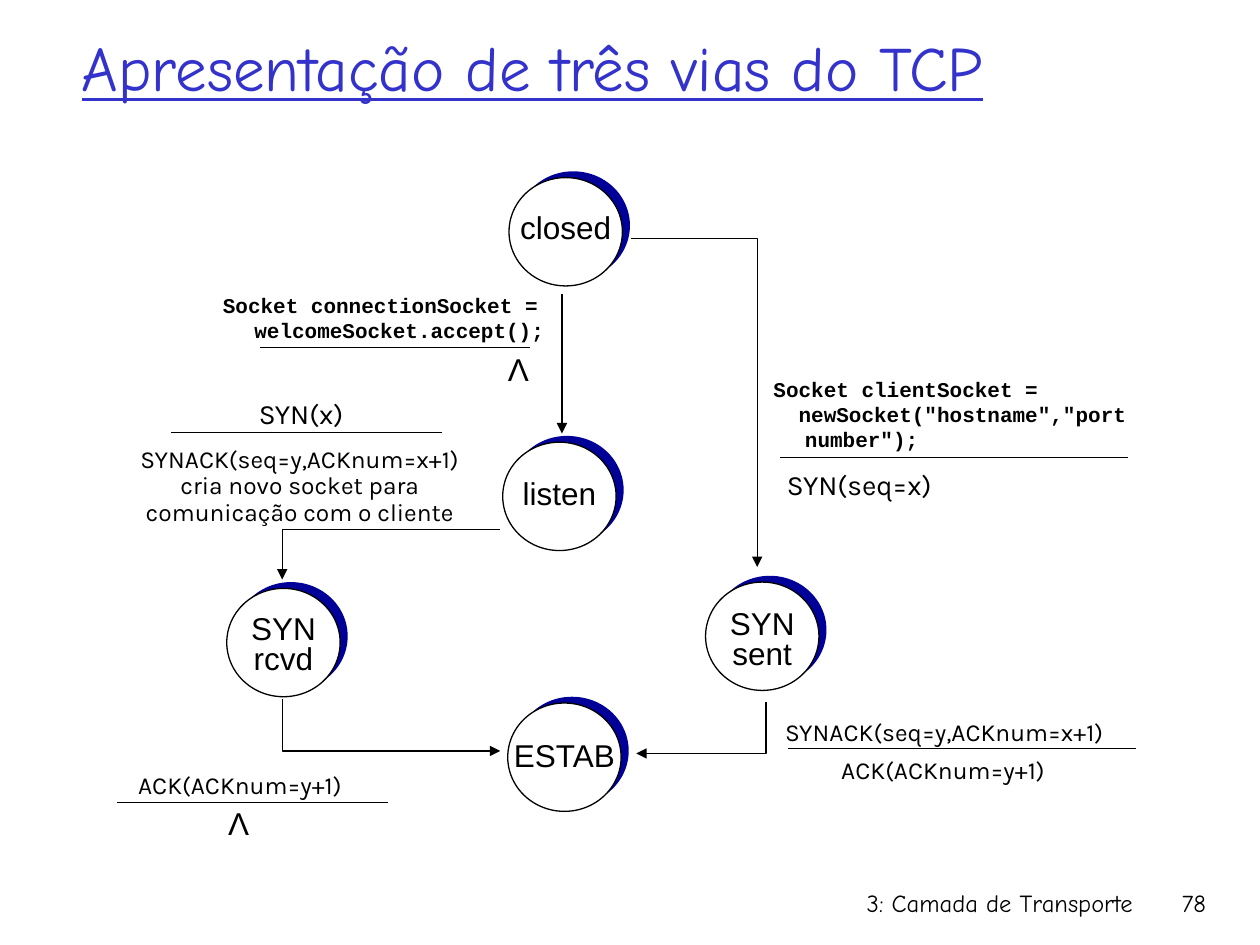
from dataclasses import dataclass

import pptx
import pptx.dml.color
import pptx.enum.shapes
import pptx.enum.text
import pptx.oxml
import pptx.oxml.ns
import pptx.util
from pptx.util import Inches

COLORS = {"black": "000000", "white": "FFFFFF", "navy": "000099", "title": "3333CC"}
ALIGN = pptx.enum.text.PP_ALIGN
ANCHOR = pptx.enum.text.MSO_ANCHOR
LABEL_FONT, CODE_FONT, EVENT_FONT, TITLE_FONT = "Arial", "Courier New", "Karla", "Comic Neue"
CIRCLE_WIDTH, CIRCLE_HEIGHT = 0.9, 0.86
BACK_SHIFT_X, BACK_SHIFT_Y = 0.06, -0.05
STATE_LABEL_WIDTH = 1.1


@dataclass
class State:
    """A connection state: circle corner, label lines and the label's top."""
    left: float
    top: float
    lines: list[str]
    label_top: float
    line_spacing: float = 0.8


@dataclass
class Label:
    lines: list[str]
    left: float
    top: float
    width: float
    height: float
    font: str = EVENT_FONT
    size: float = 14
    line_spacing: float | None = None
    bold: bool = False
    align: ALIGN = ALIGN.CENTER
    hanging: float = 0
    wrap: bool = False


@dataclass
class Bar:
    """The rule between an event and its action."""
    left: float
    y: float
    right: float


STATES = [
    State(4.04, 1.41, ["closed"], 1.6, 1),
    State(3.99, 3.51, ["listen"], 3.71, 1),
    State(1.8, 4.67, ["SYN", "rcvd"], 4.84),
    State(5.6, 4.62, ["SYN", "sent"], 4.8),
    State(4.03, 5.58, ["ESTAB"], 5.85),
]

CODE = dict(font=CODE_FONT, size=12, bold=True, align=ALIGN.LEFT, hanging=0.25, wrap=True)
LABELS = [
    Label(["Socket connectionSocket = welcomeSocket.accept();"], 1.67, 2.27, 2.82, 0.5, **CODE),
    Label(["Λ"], 3.93, 2.73, 0.37, 0.4, LABEL_FONT, 18),
    Label(["Socket clientSocket =", '  newSocket("hostname","port number");'],
          6.04, 2.94, 3.16, 0.7, **CODE),
    Label(["SYN(seq=x)"], 6.13, 3.66, 1.38, 0.37, size=16),
    Label(["SYN(x)"], 1.95, 3.1, 0.88, 0.37, size=16),
    Label(["SYNACK(seq=y,ACKnum=x+1)", "cria novo socket para", "comunicação com o cliente"],
          0.95, 3.5, 2.86, 0.72, line_spacing=0.9),
    Label(["SYNACK(seq=y,ACKnum=x+1)"], 6.07, 5.67, 2.85, 0.31, line_spacing=0.9),
    Label(["ACK(ACKnum=y+1)"], 6.53, 5.97, 1.91, 0.31, line_spacing=0.9),
    Label(["ACK(ACKnum=y+1)"], 0.95, 6.09, 1.91, 0.31, line_spacing=0.9),
    Label(["Λ"], 1.71, 6.33, 0.37, 0.4, LABEL_FONT, 18),
    Label(["3: Camada de Transporte"], 5.92, 7, 3.17, 0.5, TITLE_FONT, align=ALIGN.RIGHT, wrap=True),
    Label(["78"], 8.93, 7, 0.74, 0.5, TITLE_FONT, align=ALIGN.RIGHT, wrap=True),
]

BARS = [
    Bar(2.06, 2.76, 4.21),
    Bar(1.36, 3.43, 3.51),
    Bar(6.19, 3.63, 8.95),
    Bar(6.25, 5.94, 9.02),
    Bar(0.93, 6.37, 3.08),
]

# Each bent transition runs from its source state to its target state.
BENT_TRANSITIONS = [
    [(5.01, 1.89), (6.01, 1.89), (6.01, 4.5)],
    [(3.97, 4.2), (2.24, 4.2), (2.24, 4.6)],
    [(2.24, 5.55), (2.24, 5.96), (3.97, 5.96)],
    [(6.08, 5.57), (6.08, 5.98), (5.05, 5.98)],
]


def color(name: str) -> pptx.dml.color.RGBColor:
    return pptx.dml.color.RGBColor.from_string(COLORS[name])


def write_text(frame, lines: list[str], *, font: str, size: float, fill: str = "black",
               bold: bool = False, underline: bool = False, align: ALIGN = ALIGN.CENTER,
               line_spacing: float | None = None, hanging: float = 0,
               wrap: bool = False) -> None:
    frame.word_wrap = wrap
    frame.vertical_anchor = ANCHOR.TOP
    for index, line in enumerate(lines):
        paragraph = frame.add_paragraph() if index else frame.paragraphs[0]
        paragraph.alignment = align
        if line_spacing:
            paragraph.line_spacing = line_spacing
        if hanging:
            properties = paragraph._p.get_or_add_pPr()
            properties.set("marL", str(Inches(hanging)))
            properties.set("indent", str(-Inches(hanging)))
        run = paragraph.add_run()
        run.text = line
        run.font.name = font
        run.font.size = pptx.util.Pt(size)
        run.font.bold = bold
        run.font.underline = underline
        run.font.color.rgb = color(fill)


def add_label(slide, label: Label) -> None:
    box = slide.shapes.add_textbox(Inches(label.left), Inches(label.top),
                                   Inches(label.width), Inches(label.height))
    write_text(box.text_frame, label.lines, font=label.font, size=label.size, bold=label.bold,
               align=label.align, line_spacing=label.line_spacing,
               hanging=label.hanging, wrap=label.wrap)


def add_circle(group, left: float, top: float, fill: str, outlined: bool) -> None:
    circle = group.shapes.add_shape(pptx.enum.shapes.MSO_SHAPE.OVAL, Inches(left), Inches(top),
                                    Inches(CIRCLE_WIDTH), Inches(CIRCLE_HEIGHT))
    circle.shadow.inherit = False
    circle.fill.solid()
    circle.fill.fore_color.rgb = color(fill)
    if outlined:
        style_line(circle)
    else:
        circle.line.fill.background()


def add_state(slide, state: State) -> None:
    group = slide.shapes.add_group_shape()
    add_circle(group, state.left + BACK_SHIFT_X, state.top + BACK_SHIFT_Y, "navy", False)
    add_circle(group, state.left, state.top, "white", True)
    label_left = state.left + (CIRCLE_WIDTH - STATE_LABEL_WIDTH) / 2
    height = 0.58 if len(state.lines) > 1 else 0.4
    add_label(slide, Label(state.lines, label_left, state.label_top, STATE_LABEL_WIDTH, height,
                           LABEL_FONT, 18, state.line_spacing))


def style_line(shape, arrow: bool = False) -> None:
    shape.line.color.rgb = color("black")
    shape.line.width = pptx.util.Pt(0.75)
    if arrow:
        tail = pptx.oxml.parse_xml(f'<a:tailEnd {pptx.oxml.ns.nsdecls("a")} type="triangle"/>')
        shape.line._get_or_add_ln().append(tail)


def add_line(slide, start: tuple[float, float], end: tuple[float, float],
             arrow: bool = False) -> None:
    connector = slide.shapes.add_connector(pptx.enum.shapes.MSO_CONNECTOR.STRAIGHT,
                                           *map(Inches, start + end))
    style_line(connector, arrow)
    effects = pptx.oxml.parse_xml(f'<a:effectLst {pptx.oxml.ns.nsdecls("a")}/>')
    connector._element.spPr.append(effects)


def add_bent_arrow(slide, points: list[tuple[float, float]]) -> None:
    corners = [(Inches(x), Inches(y)) for x, y in points]
    builder = slide.shapes.build_freeform(*corners[0])
    builder.add_line_segments(corners[1:], close=False)
    shape = builder.convert_to_shape()
    shape.shadow.inherit = False
    shape.fill.background()
    style_line(shape, arrow=True)


def main() -> None:
    presentation = pptx.Presentation()
    presentation.slide_width, presentation.slide_height = Inches(10), Inches(7.5)
    slide = presentation.slides.add_slide(presentation.slide_layouts[5])

    title = slide.shapes.title
    title.left, title.top, title.width, title.height = map(Inches, (0.55, 0.18, 8.27, 0.93))
    write_text(title.text_frame, ["Apresentação de três vias do TCP"], font=TITLE_FONT, size=36,
               fill="title", underline=True, align=ALIGN.LEFT, wrap=True)

    for state in STATES:
        add_state(slide, state)
    for points in BENT_TRANSITIONS:
        add_bent_arrow(slide, points)
    add_line(slide, (4.46, 2.33), (4.46, 3.44), arrow=True)
    for bar in BARS:
        add_line(slide, (bar.left, bar.y), (bar.right, bar.y))
    for label in LABELS:
        add_label(slide, label)

    presentation.save("out.pptx")


if __name__ == "__main__":
    main()
